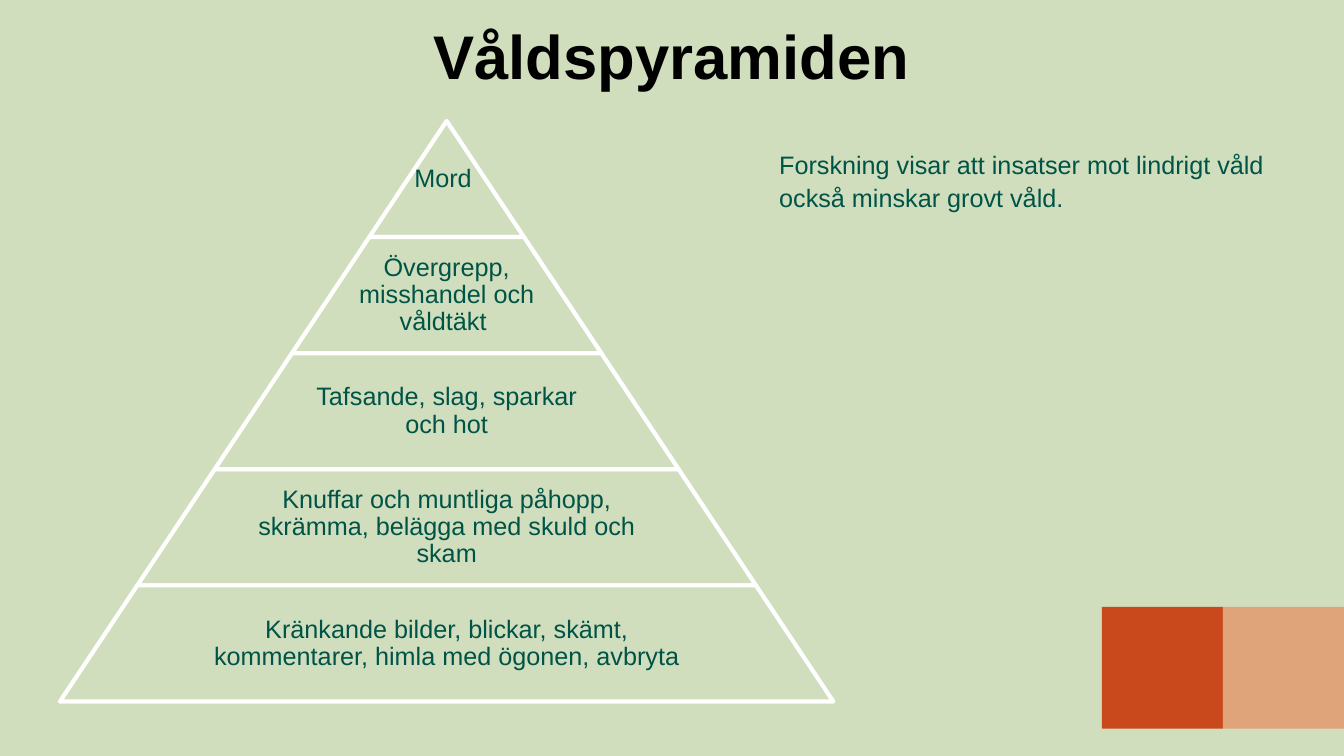
import pptx
import pptx.util
import pptx.dml.color
import pptx.enum.shapes
import pptx.enum.text
import pptx.oxml
import pptx.oxml.ns
from dataclasses import dataclass

# Content: pyramid levels from the top, with fill opacity in percent
TITLE = "Våldspyramiden"
LEVELS = [
    ("Mord ", 90),
    ("Övergrepp, misshandel och våldtäkt ", 80),
    ("Tafsande, slag, sparkar och hot", 70),
    ("Knuffar och muntliga påhopp, skrämma, belägga med skuld och skam", 60),
    ("Kränkande bilder, blickar, skämt, kommentarer, himla med ögonen, avbryta", 90),
]
REMARK = "Forskning visar att insatser mot lindrigt våld också minskar grovt våld."


@dataclass(frozen=True)
class Theme:
    font: str = "Arial"
    background: str = "D0DEBD"
    text: str = "005447"
    title: str = "000000"
    outline: str = "FFFFFF"
    squares: tuple = ("C9491C", "DFA479")
    title_size: int = 44
    body_size: int = 18
    outline_width: int = 3


THEME = Theme()
ALIGN = pptx.enum.text.PP_ALIGN
ANCHOR = pptx.enum.text.MSO_ANCHOR
SHAPE = pptx.enum.shapes.MSO_SHAPE
Inches = pptx.util.Inches

# Layout in inches
SLIDE_WIDTH, SLIDE_HEIGHT = 13.33, 7.5
PYRAMID_CENTER, PYRAMID_TOP = 4.43, 1.2
PYRAMID_WIDTH, PYRAMID_HEIGHT = 7.67, 5.76
LEVEL_HEIGHT = PYRAMID_HEIGHT / len(LEVELS)
LEVEL_STEP = PYRAMID_WIDTH / len(LEVELS)
SLOPE = LEVEL_STEP / 2 / LEVEL_HEIGHT
LABEL_SHARE = 0.65
SQUARE_WIDTH, SQUARE_HEIGHT, SQUARE_TOP = 1.2, 1.21, 6.02


def color(value):
    return pptx.dml.color.RGBColor.from_string(value)


def set_values(target, values):
    for name, value in values.items():
        setattr(target, name, value)


def add_filled(kind, box, fill):
    shape = slide.shapes.add_shape(kind, *map(Inches, box))
    shape.shadow.inherit = False
    shape.fill.solid()
    shape.fill.fore_color.rgb = color(fill)
    shape.line.fill.background()
    return shape


def add_text(text, box, paragraph_format, font_format, ink, frame_format=None):
    frame = slide.shapes.add_textbox(*map(Inches, box)).text_frame
    set_values(frame, {"word_wrap": True, **(frame_format or {})})
    paragraph = frame.paragraphs[0]
    set_values(paragraph, paragraph_format)
    run = paragraph.add_run()
    run.text = text
    set_values(run.font, {"name": THEME.font, **font_format})
    run.font.color.rgb = color(ink)


def set_opacity(shape, percent):
    tag = pptx.oxml.ns.qn("a:srgbClr")
    fill_color = next(shape.fill._xPr.iter(tag))
    fill_color.append(pptx.oxml.parse_xml(
        f'<a:alpha {pptx.oxml.ns.nsdecls("a")} val="{percent * 1000}"/>'))


presentation = pptx.Presentation()
set_values(presentation, {"slide_width": Inches(SLIDE_WIDTH),
                          "slide_height": Inches(SLIDE_HEIGHT)})
slide = presentation.slides.add_slide(presentation.slide_layouts[6])
slide.background.fill.solid()
slide.background.fill.fore_color.rgb = color(THEME.background)

# Corner squares, flush with the right edge
squares_left = SLIDE_WIDTH - SQUARE_WIDTH * len(THEME.squares)
for column, fill in enumerate(THEME.squares):
    left = squares_left + column * SQUARE_WIDTH
    add_filled(SHAPE.RECTANGLE, (left, SQUARE_TOP, SQUARE_WIDTH, SQUARE_HEIGHT), fill)

# Pyramid: each level is one step wider than the one above
body = {"size": pptx.util.Pt(THEME.body_size)}
label_frame = {"vertical_anchor": ANCHOR.MIDDLE,
               **{f"margin_{side}": Inches(0.03)
                  for side in ("left", "top", "right", "bottom")}}
for row, (label, opacity) in enumerate(LEVELS):
    top = PYRAMID_TOP + row * LEVEL_HEIGHT
    width = (row + 1) * LEVEL_STEP
    level = add_filled(SHAPE.TRAPEZOID,
                       (PYRAMID_CENTER - width / 2, top, width, LEVEL_HEIGHT),
                       THEME.background)
    level.adjustments[0] = SLOPE
    set_opacity(level, opacity)
    level.line.color.rgb = color(THEME.outline)
    level.line.width = pptx.util.Pt(THEME.outline_width)

    label_width = width * LABEL_SHARE if row else width
    add_text(label, (PYRAMID_CENTER - label_width / 2, top, label_width, LEVEL_HEIGHT),
             {"alignment": ALIGN.CENTER, "line_spacing": 0.9},
             body, THEME.text, label_frame)

# Title and remark
add_text(TITLE, (4.2, 0.21, 8.74, 1.45), {"line_spacing": 0.9},
         {"size": pptx.util.Pt(THEME.title_size), "bold": True}, THEME.title)
add_text(REMARK, (7.63, 1.4, 5.7, 4.97), {"line_spacing": 1.1}, body, THEME.text)

presentation.save("out.pptx")
